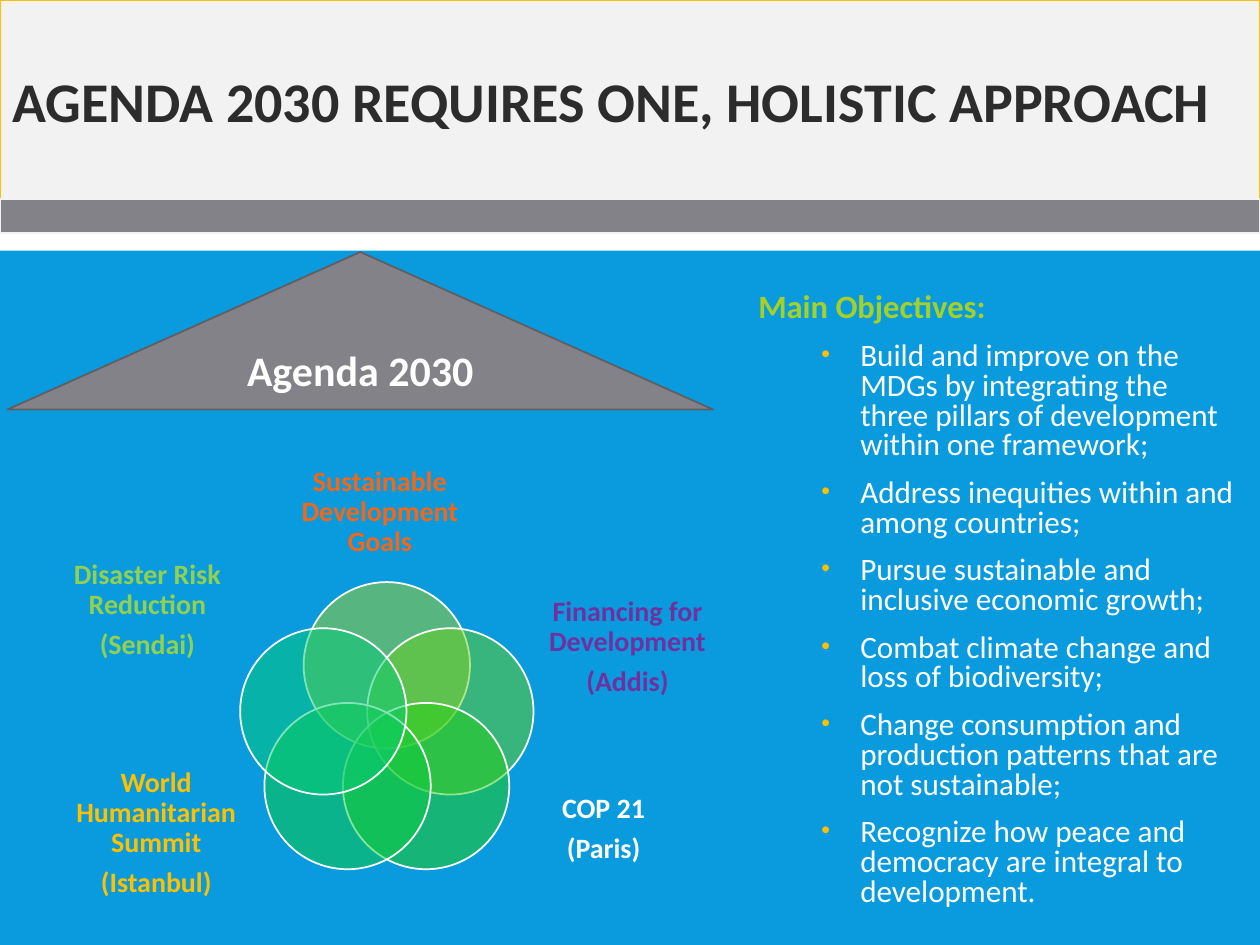
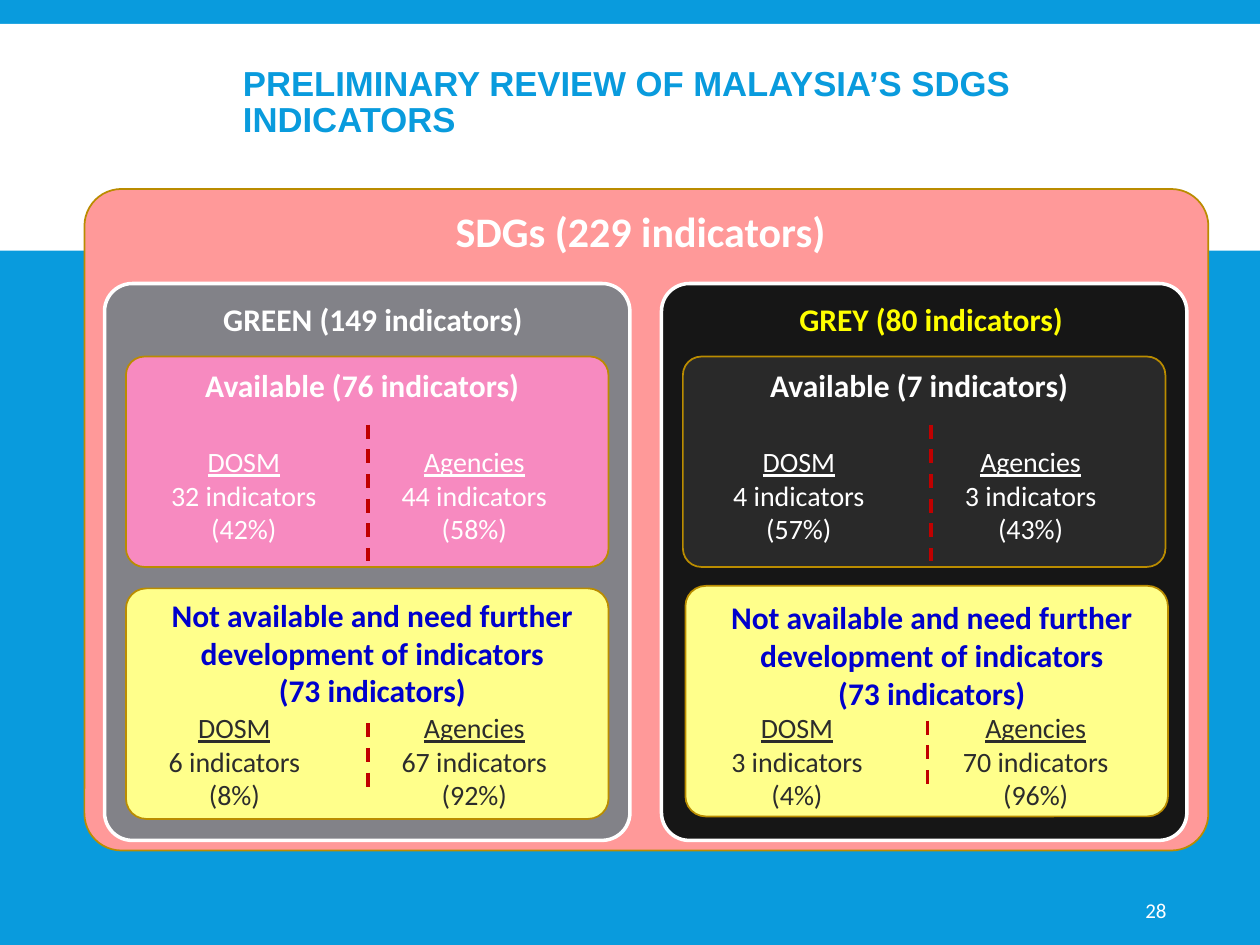
from dataclasses import dataclass
from math import cos, radians, sin

from lxml.etree import SubElement
from pptx import Presentation
from pptx.dml.color import RGBColor
from pptx.enum.dml import MSO_LINE
from pptx.enum.shapes import MSO_CONNECTOR as Connector, MSO_SHAPE as Preset
from pptx.enum.text import MSO_ANCHOR as Anchor, PP_ALIGN as Align
from pptx.oxml.ns import qn
from pptx.shapes.autoshape import Shape
from pptx.slide import Slide
from pptx.util import Inches, Pt

BLUE = "099BDD"
WHITE = "FFFFFF"
GREY = "828288"
GOLD = "FFC000"
DARK_GOLD = "BA8C00"
DARK = "2C2C2C"
YELLOW = "FFFF8B"
INDIGO = "0000CC"
LIME = "A5D028"
RED = "C00000"
DEFAULT_INSETS = (0.1, 0.05, 0.1, 0.05)
NO_INSETS = (0, 0, 0, 0)

Place = tuple[float, float, float, float]


@dataclass(frozen=True)
class Style:
    size: float
    color: str
    bold: bool = False
    font: str = "Calibri"
    align: Align = Align.CENTER
    spacing: float = 1.0
    before: float = 0


@dataclass(frozen=True)
class Agreement:
    lines: list[str]
    color: str
    place: Place
    circle_fill: str


@dataclass(frozen=True)
class Column:
    place: Place
    lines: list[str]


@dataclass(frozen=True)
class Card:
    place: Place
    fill: str
    heading: list[str]
    heading_place: Place
    heading_color: str
    column_color: str
    columns: list[Column]
    divider: tuple[float, float, float]


@dataclass(frozen=True)
class Panel:
    left: float
    fill: str
    heading: str
    heading_left: float
    heading_color: str
    cards: list[Card]


AGREEMENTS = [
    Agreement(["Sustainable Development Goals"], "F56617", (2.25, 3.62, 1.53, 0.89), "A5D025"),
    Agreement(["Financing for Development", "(Addis)"], "7030A0", (4.29, 4.48, 1.38, 1.32), "67CF1D"),
    Agreement(["COP 21", "(Paris)"], WHITE, (4.1, 5.89, 1.38, 1.39), "26CE15"),
    Agreement(["World Humanitarian Summit", "(Istanbul)"], GOLD, (0.55, 5.94, 1.38, 1.35), "0ECC3C"),
    Agreement(["Disaster Risk Reduction", "(Sendai)"], "92D050", (0.48, 4.21, 1.38, 1.27), "06CB76"),
]

OBJECTIVES = [
    "Build and improve on the MDGs by integrating the three pillars of development within one framework;",
    "Address inequities within and among countries;",
    "Pursue sustainable and inclusive economic growth;",
    "Combat climate change and loss of biodiversity;",
    "Change consumption and production patterns that are not sustainable;",
    "Recognize how peace and democracy are integral to development.",
]


def column(left: float, top: float, width: float, *lines: str) -> Column:
    return Column((left, top, width, 0.91), list(lines))


def available(left: float, count: int, fill: str, divider_left: float, columns: list[Column]) -> Card:
    return Card((left, 2.83, 3.83, 1.67), fill, [f"Available ({count} indicators)"],
                (left, 2.86, 3.75, 0.4), WHITE, WHITE, columns, (divider_left, 3.37, 1.08))


def missing(left: float, top: float, heading_top: float, divider: tuple[float, float, float],
            columns: list[Column]) -> Card:
    heading = ["Not available and need further development of indicators", "(73 indicators)"]
    return Card((left, top, 3.83, 1.83), YELLOW, heading, (left + 0.08, heading_top, 3.75, 1.01),
                INDIGO, DARK, columns, divider)


PANELS = [
    Panel(0.83, GREY, "GREEN (149 indicators)", 1, WHITE, [
        available(1, 76, "F78AC0", 2.92, [
            column(1.2, 3.48, 1.47, "DOSM", "32 indicators", "(42%)"),
            column(3.03, 3.48, 1.47, "Agencies", "44 indicators", "(58%)"),
        ]),
        missing(1, 4.67, 4.68, (2.92, 5.74, 0.58), [
            column(1.22, 5.59, 1.28, "DOSM", "6 indicators", "(8%)"),
            column(3.08, 5.59, 1.37, "Agencies", "67 indicators", "(92%)"),
        ]),
    ]),
    Panel(5.25, "161616", "GREY (80 indicators)", 5.43, "FFFF00", [
        available(5.42, 7, "292929", 7.39, [
            column(5.67, 3.48, 1.34, "DOSM", "4 indicators", "(57%)"),
            column(7.51, 3.48, 1.34, "Agencies", "3 indicators", "(43%)"),
        ]),
        missing(5.44, 4.65, 4.7, (7.36, 5.72, 0.58), [
            column(5.69, 5.59, 1.27, "DOSM", "3 indicators", "(4%)"),
            column(7.53, 5.59, 1.38, "Agencies", "70 indicators", "(96%)"),
        ]),
    ]),
]


def rgb(color: str) -> RGBColor:
    return RGBColor.from_string(color)


def write(shape: Shape, lines: list[str], style: Style, anchor: Anchor = Anchor.TOP,
          insets: Place = DEFAULT_INSETS) -> None:
    frame = shape.text_frame
    frame.text = "\n".join(lines)
    frame.word_wrap = True
    frame.vertical_anchor = anchor
    frame.margin_left, frame.margin_top, frame.margin_right, frame.margin_bottom = map(Inches, insets)
    for index, para in enumerate(frame.paragraphs):
        para.alignment = style.align
        para.line_spacing = style.spacing
        para.space_before = Pt(style.before if index else 0)
        for span in para.runs:
            span.font.size = Pt(style.size)
            span.font.name = style.font
            span.font.bold = style.bold
            span.font.color.rgb = rgb(style.color)


def add_text(page: Slide, place: Place, lines: list[str], style: Style,
             anchor: Anchor = Anchor.TOP, insets: Place = DEFAULT_INSETS) -> Shape:
    box = page.shapes.add_textbox(*map(Inches, place))
    write(box, lines, style, anchor, insets)
    return box


def add_block(page: Slide, preset: Preset, place: Place, fill: str, line: str | None = None,
              width: float = 1, radius: float | None = None) -> Shape:
    shape = page.shapes.add_shape(preset, *map(Inches, place))
    shape.shadow.inherit = False
    shape.fill.solid()
    shape.fill.fore_color.rgb = rgb(fill)
    if line:
        shape.line.color.rgb = rgb(line)
        shape.line.width = Pt(width)
    else:
        shape.line.fill.background()
    if radius is not None:
        shape.adjustments[0] = radius
    return shape


def add_divider(page: Slide, left: float, top: float, height: float) -> None:
    divider = page.shapes.add_connector(Connector.STRAIGHT, Inches(left), Inches(top),
                                        Inches(left), Inches(top + height))
    divider.line.color.rgb = rgb(RED)
    divider.line.width = Pt(2)
    divider.line.dash_style = MSO_LINE.DASH
    SubElement(divider._element.spPr, qn("a:effectLst"))


def add_page(deck: Presentation) -> Slide:
    page = deck.slides.add_slide(deck.slide_layouts[6])
    page.background.fill.solid()
    page.background.fill.fore_color.rgb = rgb(BLUE)
    add_block(page, Preset.RECTANGLE, (0, 0.19, 10, 1.8), WHITE)
    return page


def add_circle(page: Slide, index: int, fill: str) -> None:
    angle = radians(360 / len(AGREEMENTS) * index - 90)
    size, orbit = 1.32, 0.53
    left = 3.07 + orbit * cos(angle) - size / 2
    top = 5.81 + orbit * sin(angle) - size / 2
    circle = add_block(page, Preset.OVAL, (left, top, size, size), fill, WHITE)
    color = circle._element.spPr.find(qn("a:solidFill")).find(qn("a:srgbClr"))
    SubElement(color, qn("a:alpha"), val="50000")


def add_objectives(page: Slide) -> None:
    style = Style(17.8, "FEFEFE", align=Align.LEFT, spacing=0.8, before=10)
    box = add_text(page, (5.92, 2.02, 3.97, 5.5), ["Main Objectives:", *OBJECTIVES], style, Anchor.MIDDLE)
    heading, *items = box.text_frame.paragraphs
    for span in heading.runs:
        span.font.size = Pt(18.6)
        span.font.bold = True
        span.font.color.rgb = rgb(LIME)
    for para in items:
        para.level = 1
        properties = para._p.get_or_add_pPr()
        properties.set("marL", str(Inches(0.81)))
        properties.set("indent", str(Inches(-0.31)))
        bullet_color = SubElement(properties, qn("a:buClr"))
        SubElement(bullet_color, qn("a:srgbClr"), val=GOLD)
        SubElement(properties, qn("a:buSzPct"), val="80000")
        SubElement(properties, qn("a:buFont"), typeface="Arial")
        SubElement(properties, qn("a:buChar"), char="•")


def build_agenda(deck: Presentation) -> None:
    page = add_page(deck)
    title = add_block(page, Preset.RECTANGLE, (0, 0, 10, 1.67), "F2F2F2", GOLD, 0.75)
    write(title, ["AGENDA 2030 REQUIRES ONE, HOLISTIC APPROACH"],
          Style(32, DARK, True, align=Align.LEFT, spacing=0.85), Anchor.MIDDLE)
    add_block(page, Preset.RECTANGLE, (0, 1.58, 10, 0.27), GREY, "F2F2F2")
    for index, agreement in enumerate(AGREEMENTS):
        add_circle(page, index, agreement.circle_fill)
        add_text(page, agreement.place, agreement.lines,
                 Style(16, agreement.color, True, spacing=0.9, before=5.6), Anchor.MIDDLE, NO_INSETS)
    roof = add_block(page, Preset.ISOSCELES_TRIANGLE, (0.06, 2, 5.6, 1.25), GREY, "5E5E63")
    write(roof, ["Agenda 2030"], Style(24, WHITE, True), Anchor.MIDDLE)
    add_objectives(page)


def add_card(page: Slide, card: Card) -> None:
    add_block(page, Preset.ROUNDED_RECTANGLE, card.place, card.fill, DARK_GOLD, radius=0.088)
    add_text(page, card.heading_place, card.heading, Style(18, card.heading_color, True),
             insets=(0, 0.05, 0, 0.05))
    for source in card.columns:
        box = add_text(page, source.place, source.lines, Style(16, card.column_color))
        box.text_frame.paragraphs[0].runs[0].font.underline = True
    add_divider(page, *card.divider)


def build_indicators(deck: Presentation) -> None:
    page = add_page(deck)
    add_text(page, (1.83, 0.45, 8, 0.75), ["PRELIMINARY REVIEW OF MALAYSIA’S SDGS INDICATORS"],
             Style(19.8, BLUE, True, "Arial", Align.LEFT, 0.85), Anchor.MIDDLE)
    add_text(page, (9.04, 7.02, 0.78, 0.4), ["28"], Style(12, WHITE, align=Align.LEFT),
             Anchor.MIDDLE, (0.05, 0.05, 0.1, 0.05))
    add_block(page, Preset.ROUNDED_RECTANGLE, (0.67, 1.5, 8.92, 5.25), "FF9999", DARK_GOLD, radius=0.056)
    add_text(page, (0.75, 1.58, 8.67, 0.51), ["SDGs (229 indicators)"], Style(24, WHITE, True))
    for panel in PANELS:
        add_block(page, Preset.ROUNDED_RECTANGLE, (panel.left, 2.25, 4.17, 4.42), panel.fill, WHITE, 2, 0.053)
        add_text(page, (panel.heading_left, 2.33, 3.92, 0.42), [panel.heading],
                 Style(18, panel.heading_color, True))
        for card in panel.cards:
            add_card(page, card)


def main() -> None:
    deck = Presentation()
    deck.slide_width, deck.slide_height = Inches(10), Inches(7.5)
    build_agenda(deck)
    build_indicators(deck)
    deck.save("out.pptx")


if __name__ == "__main__":
    main()
